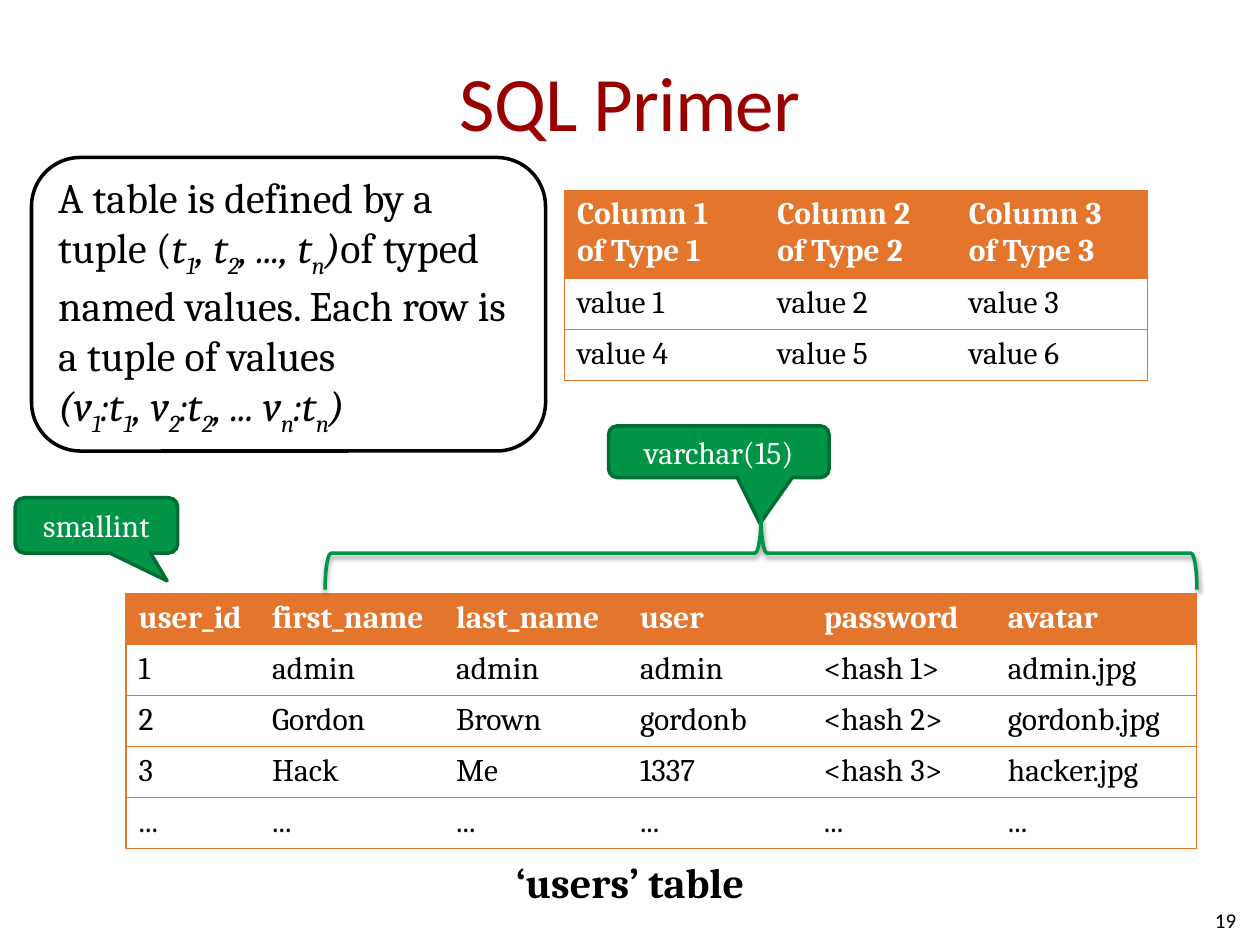
from dataclasses import dataclass
from typing import Any

from lxml import etree
from pptx import Presentation
from pptx.dml.color import RGBColor
from pptx.enum import shapes, text
from pptx.oxml import ns
from pptx.util import Inches, Pt


@dataclass(frozen=True)
class Theme:
    red: str = "990000"
    orange: str = "E3752D"
    green: str = "009446"
    dark: str = "006D34"
    black: str = "000000"
    white: str = "FFFFFF"
    head: str = "Calibri"
    body: str = "Cambria"
    title: int = 44
    large: int = 24
    mid: int = 18
    small: int = 12
    line: float = 2
    rule: float = 0.75


@dataclass(frozen=True)
class Box:
    left: float
    top: float
    width: float
    height: float

    def place(self) -> list[int]:
        return [Inches(n) for n in (self.left, self.top, self.width, self.height)]


@dataclass(frozen=True)
class Style:
    size: int
    color: str
    font: str = Theme.body
    bold: bool = False
    italic: bool = False


@dataclass(frozen=True)
class Grid:
    box: Box
    cols: list[float]
    rows: list[list[str]]


@dataclass(frozen=True)
class Label:
    box: Box
    words: str
    tip: tuple[float, float]


T = Theme()
PLAIN = Style(T.large, T.black)
MATH = Style(T.large, T.black, italic=True)
ALIGN = text.PP_ALIGN
MIDDLE = text.MSO_ANCHOR.MIDDLE
KIND = shapes.MSO_SHAPE


def rgb(color: str) -> RGBColor:
    return RGBColor.from_string(color)


def add_run(para: Any, words: str, style: Style) -> Any:
    run = para.add_run()
    run.text = words
    font = run.font
    font.size, font.name = Pt(style.size), style.font
    font.bold, font.italic = style.bold, style.italic
    font.color.rgb = rgb(style.color)
    return run


def add_lines(para: Any, words: str, style: Style) -> None:
    for i, line in enumerate(words.split("\n")):
        if i:
            para.add_line_break()
        add_run(para, line, style)


def add_math(para: Any, terms: str) -> None:
    """Set the parts between bars, one in two, as subscripts."""
    for i, part in enumerate(terms.split("|")):
        run = add_run(para, part, MATH)
        if i % 2:
            run._r.get_or_add_rPr().set("baseline", "-25000")


def add_text(slide: Any, box: Box, words: str, style: Style, align: Any, anchor: Any) -> Any:
    frame = slide.shapes.add_textbox(*box.place()).text_frame
    frame.word_wrap, frame.vertical_anchor = True, anchor
    para = frame.paragraphs[0]
    para.alignment = align
    return add_run(para, words, style)


def add_shape(slide: Any, kind: Any, box: Box, fill: str | None, line: str) -> Any:
    shape = slide.shapes.add_shape(kind, *box.place())
    shape.shadow.inherit = False
    if fill:
        shape.fill.solid()
        shape.fill.fore_color.rgb = rgb(fill)
    else:
        shape.fill.background()
    shape.line.color.rgb, shape.line.width = rgb(line), Pt(T.line)
    shape.text_frame.word_wrap = True
    shape.text_frame.vertical_anchor = MIDDLE
    return shape


def add_label(slide: Any, label: Label) -> None:
    shape = add_shape(slide, KIND.ROUNDED_RECTANGULAR_CALLOUT, label.box, T.green, T.dark)
    shape.adjustments[0], shape.adjustments[1] = label.tip
    para = shape.text_frame.paragraphs[0]
    para.alignment = ALIGN.CENTER
    add_run(para, label.words, Style(T.mid, T.white))


def add_edge(cell: Any, side: str, shown: bool) -> None:
    props = cell._tc.get_or_add_tcPr()
    edge = etree.SubElement(props, ns.qn(f"a:ln{side}"), w=str(Pt(T.rule)))
    if shown:
        fill = etree.SubElement(edge, ns.qn("a:solidFill"))
        etree.SubElement(fill, ns.qn("a:srgbClr"), val=T.orange)
    else:
        etree.SubElement(edge, ns.qn("a:noFill"))


def add_grid(slide: Any, grid: Grid) -> None:
    size = len(grid.rows), len(grid.cols)
    table = slide.shapes.add_table(*size, *grid.box.place()).table
    table.horz_banding = False
    for col, width in zip(table.columns, grid.cols):
        col.width = Inches(width)
    for r, row in enumerate(grid.rows):
        table.rows[r].height = Inches(0.405)
        for c, words in enumerate(row):
            cell = table.cell(r, c)
            # Rules run between rows and around the outside only
            add_edge(cell, "L", c == 0)
            add_edge(cell, "R", c == size[1] - 1)
            add_edge(cell, "T", True)
            add_edge(cell, "B", True)
            cell.fill.solid()
            cell.fill.fore_color.rgb = rgb(T.white if r else T.orange)
            style = Style(T.mid, T.black if r else T.white, bold=not r)
            add_lines(cell.text_frame.paragraphs[0], words, style)


def add_brace(slide: Any, box: Box) -> None:
    brace = add_shape(slide, KIND.RIGHT_BRACE, box, None, T.green)
    brace.rotation = 270
    glow = brace._element.spPr.find(ns.qn("a:effectLst"))
    shade = etree.SubElement(glow, ns.qn("a:outerShdw"), blurRad=str(Pt(3.1)),
                             dist=str(Pt(1.6)), dir="5400000", rotWithShape="0")
    color = etree.SubElement(shade, ns.qn("a:srgbClr"), val=T.black)
    etree.SubElement(color, ns.qn("a:alpha"), val="38000")


TYPES = Grid(Box(4.48, 1.51, 4.63, 1.51), [1.59, 1.52, 1.52], [
    [f"Column {n} \nof Type {n}" for n in (1, 2, 3)],
    [f"value {n}" for n in (1, 2, 3)],
    [f"value {n}" for n in (4, 5, 6)],
])
USERS = Grid(Box(1, 4.71, 8.5, 2.03), [1.06] + [1.46] * 4 + [1.6], [
    ["user_id", "first_name", "last_name", "user", "password", "avatar"],
    ["1", "admin", "admin", "admin", "<hash 1>", "admin.jpg"],
    ["2", "Gordon", "Brown", "gordonb", "<hash 2>", "gordonb.jpg"],
    ["3", "Hack", "Me", "1337", "<hash 3>", "hacker.jpg"],
    ["..."] * 6,
])
LABELS = [
    Label(Box(0.12, 3.95, 1.29, 0.44), "smallint", (0.435, 1.0)),
    Label(Box(4.83, 3.38, 1.75, 0.41), "varchar(15)", (0.187, 1.39)),
]


def main() -> None:
    deck = Presentation()
    deck.slide_width, deck.slide_height = Inches(10), Inches(7.5)
    slide = deck.slides.add_slide(deck.slide_layouts[6])

    # Title and page number
    title = add_text(slide, Box(0.5, 0.17, 9, 1.25), "SQL Primer",
                     Style(T.title, T.red, T.head), ALIGN.CENTER, MIDDLE)
    title._r.get_or_add_rPr().set("spc", "-50")
    add_text(slide, Box(7.58, 7.1, 2.33, 0.4), "19",
             Style(T.small, T.black, T.head), ALIGN.RIGHT, MIDDLE)

    # Tables and caption
    for grid in (TYPES, USERS):
        add_grid(slide, grid)
    add_text(slide, Box(0, 6.75, 10, 0.5), "‘users’ table",
             Style(T.large, T.black, bold=True), ALIGN.CENTER, text.MSO_ANCHOR.TOP)

    # Definition
    note = add_shape(slide, KIND.ROUNDED_RECTANGLE, Box(0.25, 1.25, 4.08, 2.33), T.white, T.black)
    para = note.text_frame.paragraphs[0]
    para.alignment = ALIGN.LEFT
    add_run(para, "A table is defined by a tuple (", PLAIN)
    add_math(para, "t|1|, t|2|, ..., t|n|)")
    add_lines(para, "of typed named values. Each row is a tuple of values \n", PLAIN)
    add_math(para, "(v|1|:t|1|, v|2|:t|2|, ... v|n|:t|n|)")

    # Column types
    for label in LABELS:
        add_label(slide, label)
    add_brace(slide, Box(5.75, 0.93, 0.58, 6.92))

    deck.save("out.pptx")


if __name__ == "__main__":
    main()
